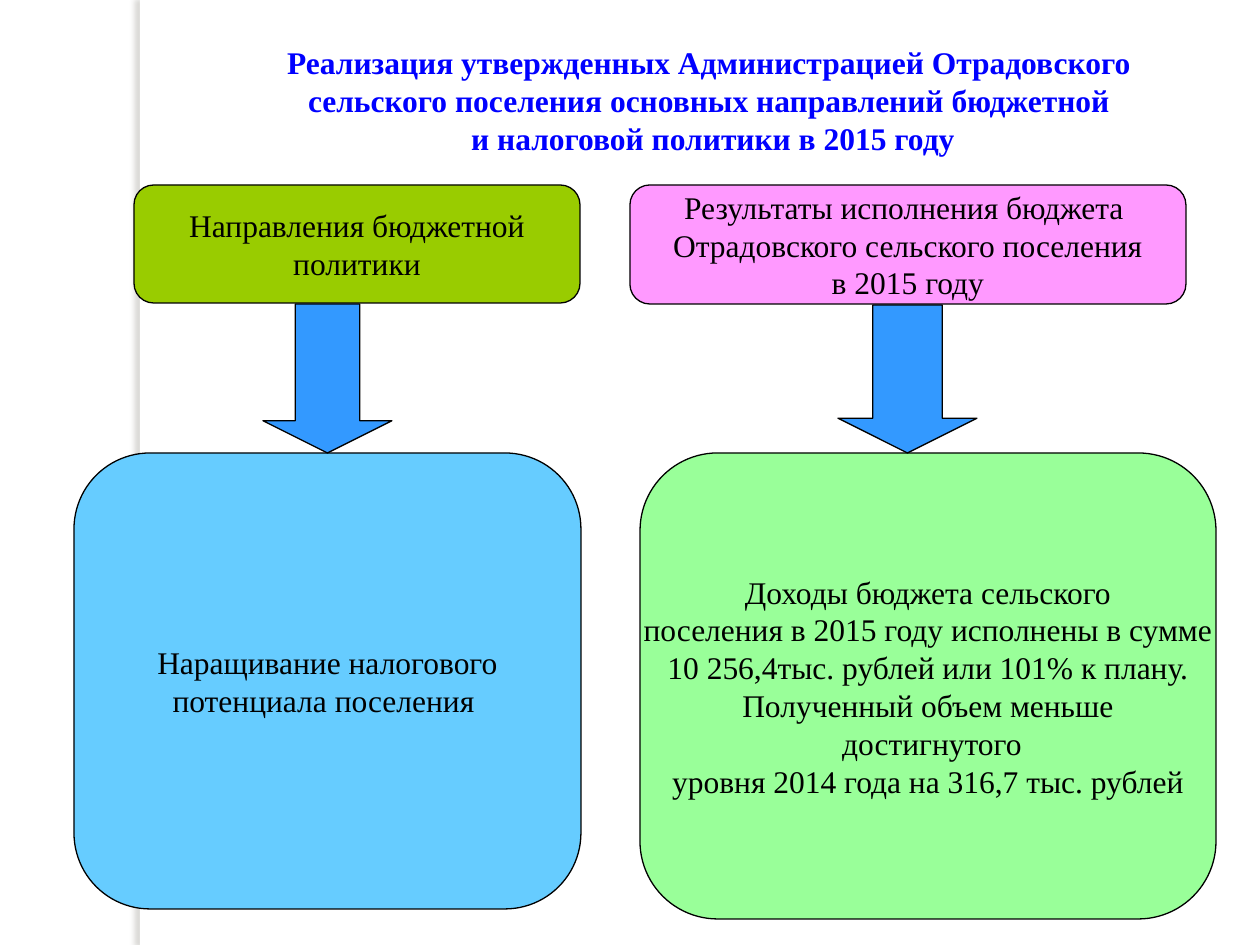
from lxml import etree
from pptx import Presentation, util as u
from pptx.dml.color import RGBColor
from pptx.enum import shapes, text
from pptx.oxml.ns import qn

PX = 914400 / 126
FONT = "Times New Roman"
WHITE = RGBColor(0xFF, 0xFF, 0xFF)
BLACK = RGBColor(0x00, 0x00, 0x00)
TITLE_BLUE = RGBColor(0x00, 0x00, 0xFF)
ARROW_BLUE = RGBColor(0x33, 0x99, 0xFF)
OLIVE = RGBColor(0x99, 0xCC, 0x00)
PINK = RGBColor(0xFF, 0x99, 0xFF)
SKY = RGBColor(0x66, 0xCC, 0xFF)
MINT = RGBColor(0x99, 0xFF, 0x99)
BOX = shapes.MSO_SHAPE.FLOWCHART_ALTERNATE_PROCESS
ARROW = shapes.MSO_SHAPE.DOWN_ARROW

prs = Presentation()
prs.slide_width, prs.slide_height = u.Inches(10), u.Inches(7.5)
slide = prs.slides.add_slide(prs.slide_layouts[6])


def add_block(preset, box, fill):
    block = slide.shapes.add_shape(preset, *(round(v * PX) for v in box))
    block.shadow.inherit = False
    block.fill.solid()
    block.fill.fore_color.rgb = fill
    block.line.color.rgb = BLACK
    block.line.width = u.Pt(0.75)
    return block


def write_lines(frame, lines, color, bold=False):
    for i, line in enumerate(lines):
        paragraph = frame.paragraphs[0] if i == 0 else frame.add_paragraph()
        paragraph.alignment = text.PP_ALIGN.CENTER
        run = paragraph.add_run()
        run.text = line
        run.font.name = FONT
        run.font.size = u.Pt(18)
        run.font.bold = bold
        run.font.color.rgb = color


# Side strip with a soft shadow to the left
strip = add_block(shapes.MSO_SHAPE.RECTANGLE, (140, 0, 10, 945), WHITE)
strip.line.fill.background()
effects = strip._element.spPr.find(qn("a:effectLst"))
shadow = etree.SubElement(effects, qn("a:outerShdw"), blurRad=str(u.Pt(3)),
                          dist=str(u.Pt(3)), dir="10800000", rotWithShape="0")
shade = etree.SubElement(shadow, qn("a:srgbClr"), val="736F63")
etree.SubElement(shade, qn("a:alpha"), val="25000")

# Title
title = slide.shapes.add_textbox(*(round(v * PX) for v in (203, 37, 1012, 127)))
title.text_frame.word_wrap = True
title.text_frame.auto_size = text.MSO_AUTO_SIZE.SHAPE_TO_FIT_TEXT
write_lines(title.text_frame, [
    "Реализация утвержденных Администрацией Отрадовского "
    "сельского поселения основных направлений бюджетной",
    " и налоговой политики в 2015 году",
], TITLE_BLUE, bold=True)

# Headings and the details below them
panels = [
    ((134, 185, 446, 118), OLIVE, ["Направления бюджетной", "политики"]),
    ((630, 185, 556, 119), PINK, [
        "Результаты исполнения бюджета ",
        "Отрадовского сельского поселения",
        "в 2015 году",
    ]),
    ((74, 453, 507, 456), SKY, ["Наращивание налогового", "потенциала поселения "]),
    ((640, 453, 576, 466), MINT, [
        "Доходы бюджета сельского",
        "поселения в 2015 году исполнены в сумме",
        "10 256,4тыс. рублей или 101% к плану.",
        "Полученный объем меньше",
        " достигнутого",
        "уровня 2014 года на 316,7 тыс. рублей",
    ]),
]
for box, fill, lines in panels:
    panel = add_block(BOX, box, fill)
    panel.text_frame.word_wrap = False
    panel.text_frame.vertical_anchor = text.MSO_ANCHOR.MIDDLE
    write_lines(panel.text_frame, lines, BLACK)

# Arrows from heading to detail
for box in ((263, 304, 129, 149), (838, 305, 139, 148)):
    arrow = add_block(ARROW, box, ARROW_BLUE)
    arrow.adjustments[0], arrow.adjustments[1] = 0.5, 0.25

prs.save("out.pptx")
